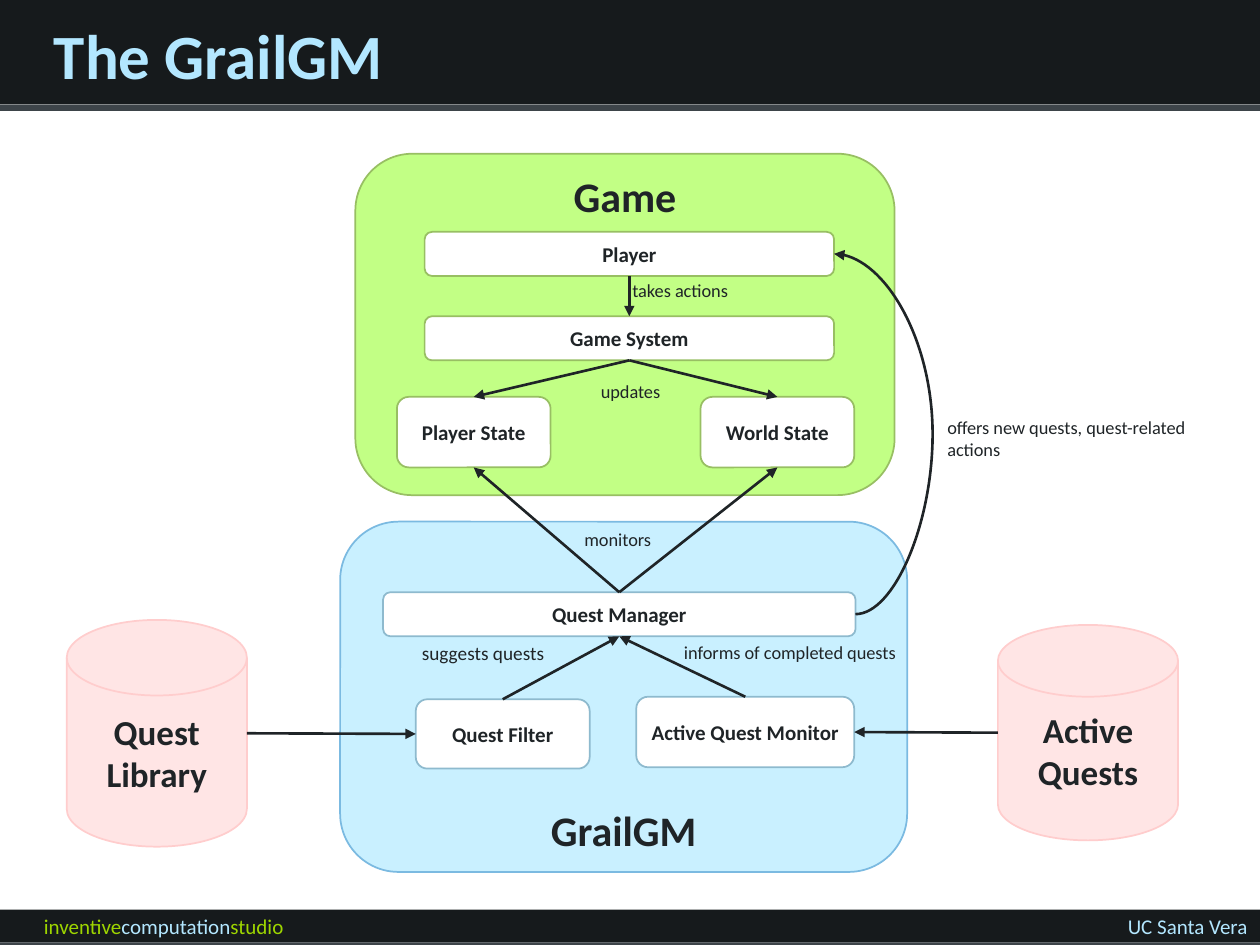
import pptx
import pptx.dml.color
import pptx.enum.shapes
import pptx.enum.text
import pptx.oxml.ns
import pptx.util
from lxml import etree

RGB = pptx.dml.color.RGBColor
SHAPE = pptx.enum.shapes.MSO_SHAPE
CONN = pptx.enum.shapes.MSO_CONNECTOR
ALIGN = pptx.enum.text.PP_ALIGN
ANCHOR = pptx.enum.text.MSO_ANCHOR
Pt = pptx.util.Pt
qn = pptx.oxml.ns.qn

BLACK = RGB(0x16, 0x1A, 0x1C)
GRAY = RGB(0x3D, 0x44, 0x49)
INK = RGB(0x1F, 0x24, 0x27)
WHITE = RGB(0xFF, 0xFF, 0xFF)
SKY = RGB(0xB3, 0xE7, 0xFF)
LIME = RGB(0x9E, 0xD6, 0x00)
GREEN = RGB(0xC2, 0xFF, 0x85)
GREEN_EDGE = RGB(0x98, 0xBF, 0x63)
BLUE = RGB(0xC9, 0xF0, 0xFF)
BLUE_EDGE = RGB(0x7B, 0xBA, 0xE1)
STEEL = RGB(0x8E, 0xBA, 0xCE)
PINK = RGB(0xFF, 0xE5, 0xE5)
PINK_EDGE = RGB(0xFF, 0xCD, 0xCD)

prs = pptx.Presentation()
prs.slide_width = pptx.util.Inches(10)
prs.slide_height = pptx.util.Inches(7.5)
s = prs.slides.add_slide(prs.slide_layouts[6])

# Grid of 100 columns by 75 rows
COL = prs.slide_width / 100
ROW = prs.slide_height / 75


def add_text(sp, *runs, size=10.5, bold=False, align=ALIGN.LEFT,
             anchor=ANCHOR.TOP, after=10, margins=None):
    """Fill a shape with one paragraph of (text, colour) runs."""
    tf = sp.text_frame
    tf.word_wrap = True
    tf.vertical_anchor = anchor
    if margins:
        tf.margin_left = tf.margin_right = int(margins[0] * COL)
        tf.margin_top = tf.margin_bottom = int(margins[1] * ROW)
    p = tf.paragraphs[0]
    p.alignment = align
    p.space_after = Pt(after)
    for text, color in runs:
        r = p.add_run()
        r.text = text
        r.font.name = "Calibri"
        r.font.size = Pt(size)
        r.font.bold = bold
        r.font.color.rgb = color


def add_block(kind, x, y, w, h, fill, edge=None):
    """Add a filled shape placed in grid columns and rows."""
    sp = s.shapes.add_shape(kind, int(x * COL), int(y * ROW), int(w * COL), int(h * ROW))
    sp.shadow.inherit = False
    sp.fill.solid()
    sp.fill.fore_color.rgb = fill
    if edge is None:
        sp.line.fill.background()
    else:
        sp.line.color.rgb = edge
        sp.line.width = Pt(1)
    return sp


# Header and footer bands
for y, h, fill in [(0, 8.3, BLACK), (72.2, 2.6, BLACK), (8.3, 0.5, GRAY), (74.8, 0.2, GRAY)]:
    add_block(SHAPE.RECTANGLE, 0, y, 100, h, fill)

# Game and GrailGM panels
for name, x, y, w, h, fill, edge, anchor in [
    ("GrailGM", 27, 41.4, 45, 27.8, BLUE, BLUE_EDGE, ANCHOR.BOTTOM),
    ("Game", 28.2, 12.2, 42.8, 27.1, GREEN, GREEN_EDGE, ANCHOR.TOP),
]:
    sp = add_block(SHAPE.ROUNDED_RECTANGLE, x, y, w, h, fill, edge)
    add_text(sp, (name, INK), size=24, bold=True, align=ALIGN.CENTER,
             anchor=anchor, margins=(1, 0))

# Quest stores
nodes = {}
disks = [("Quest Library", 5.3, 49.2, 18), ("Active Quests", 79.2, 49.6, 17.1)]
for name, x, y, h in disks:
    sp = add_block(SHAPE.FLOWCHART_MAGNETIC_DISK, x, y, 14.3, h, PINK, PINK_EDGE)
    add_text(sp, (name, INK), size=20, bold=True, align=ALIGN.CENTER, anchor=ANCHOR.MIDDLE)
    nodes[name] = sp

# Component boxes
for name, x, y, w, h, edge in [
    ("Player", 33.7, 18.4, 32.5, 3.5, GREEN_EDGE),
    ("Game System", 33.7, 25.1, 32.5, 3.5, GREEN_EDGE),
    ("Player State", 31.5, 31.5, 12.2, 5.6, GREEN_EDGE),
    ("World State", 55.6, 31.5, 12.2, 5.6, GREEN_EDGE),
    ("Quest Manager", 30.4, 47, 37.5, 3.5, STEEL),
    ("Quest Filter", 33, 55.5, 13.8, 5.5, STEEL),
    ("Active Quest Monitor", 50.5, 55.3, 17.3, 5.6, STEEL),
]:
    sp = add_block(SHAPE.ROUNDED_RECTANGLE, x, y, w, h, WHITE, edge)
    add_text(sp, (name, INK), size=12, bold=True, align=ALIGN.CENTER,
             anchor=ANCHOR.MIDDLE, margins=(0, 0.1))
    nodes[name] = sp

# Arrows between components; sides are 0 top, 1 left, 2 bottom, 3 right
for start, side, end, end_side in [
    ("Player", 2, "Game System", 0),
    ("Game System", 2, "Player State", 0),
    ("Game System", 2, "World State", 0),
    ("Quest Manager", 0, "Player State", 2),
    ("Quest Manager", 0, "World State", 2),
    ("Quest Filter", 0, "Quest Manager", 2),
    ("Active Quest Monitor", 0, "Quest Manager", 2),
    ("Quest Library", 3, "Quest Filter", 1),
    ("Active Quests", 1, "Active Quest Monitor", 3),
    ("Quest Manager", 3, "Player", 3),
]:
    a = nodes[start]
    curved = side == end_side
    x = a.left + (a.width if side == 3 else 0)
    y = a.top + a.height // 2
    c = s.shapes.add_connector(CONN.CURVE if curved else CONN.STRAIGHT, x, y, x, y)
    if a.auto_shape_type == SHAPE.ROUNDED_RECTANGLE:
        c.begin_connect(a, side)
    c.end_connect(nodes[end], end_side)
    c.line.color.rgb = INK
    c.line.width = Pt(1.5)
    etree.SubElement(c.line._get_or_add_ln(), qn("a:tailEnd"), type="triangle")
    sp_pr = c._element.spPr
    etree.SubElement(sp_pr, qn("a:effectLst"))
    if curved:
        geom = sp_pr.find(qn("a:prstGeom"))
        guides = geom.find(qn("a:avLst"))
        if guides is None:
            guides = etree.SubElement(geom, qn("a:avLst"))
        etree.SubElement(guides, qn("a:gd"), name="adj1", fmla="val -360000")

# Title, footer and arrow labels
plain = {}
footer = {"size": 12, "after": 0}
for x, y, w, h, runs, fmt in [
    (3.3, 0, 90, 8.7, [("The GrailGM", SKY)],
     {"size": 36, "bold": True, "anchor": ANCHOR.MIDDLE, "after": 0}),
    (2.5, 72, 39.2, 3, [("inventive", LIME), ("computation", SKY), ("studio", LIME)], footer),
    (66.7, 72, 33.3, 3, [("UC Santa Vera", SKY)], {**footer, "align": ALIGN.RIGHT}),
    (49.2, 21.7, 31.1, 3.7, [("takes actions", INK)], plain),
    (46.7, 29.7, 12, 3.7, [("updates", INK)], plain),
    (45.4, 41.4, 14.6, 3.7, [("monitors", INK)], plain),
    (32.5, 50.4, 21.6, 3.7, [("suggests quests", INK)], {"size": 11}),
    (53.3, 50.4, 21.1, 6.3, [("informs of completed quests", INK)], plain),
    (74.2, 32.5, 21.4, 8.1, [("offers new quests, quest-related actions", INK)], plain),
]:
    sp = s.shapes.add_textbox(int(x * COL), int(y * ROW), int(w * COL), int(h * ROW))
    add_text(sp, *runs, **fmt)

prs.save("out.pptx")
